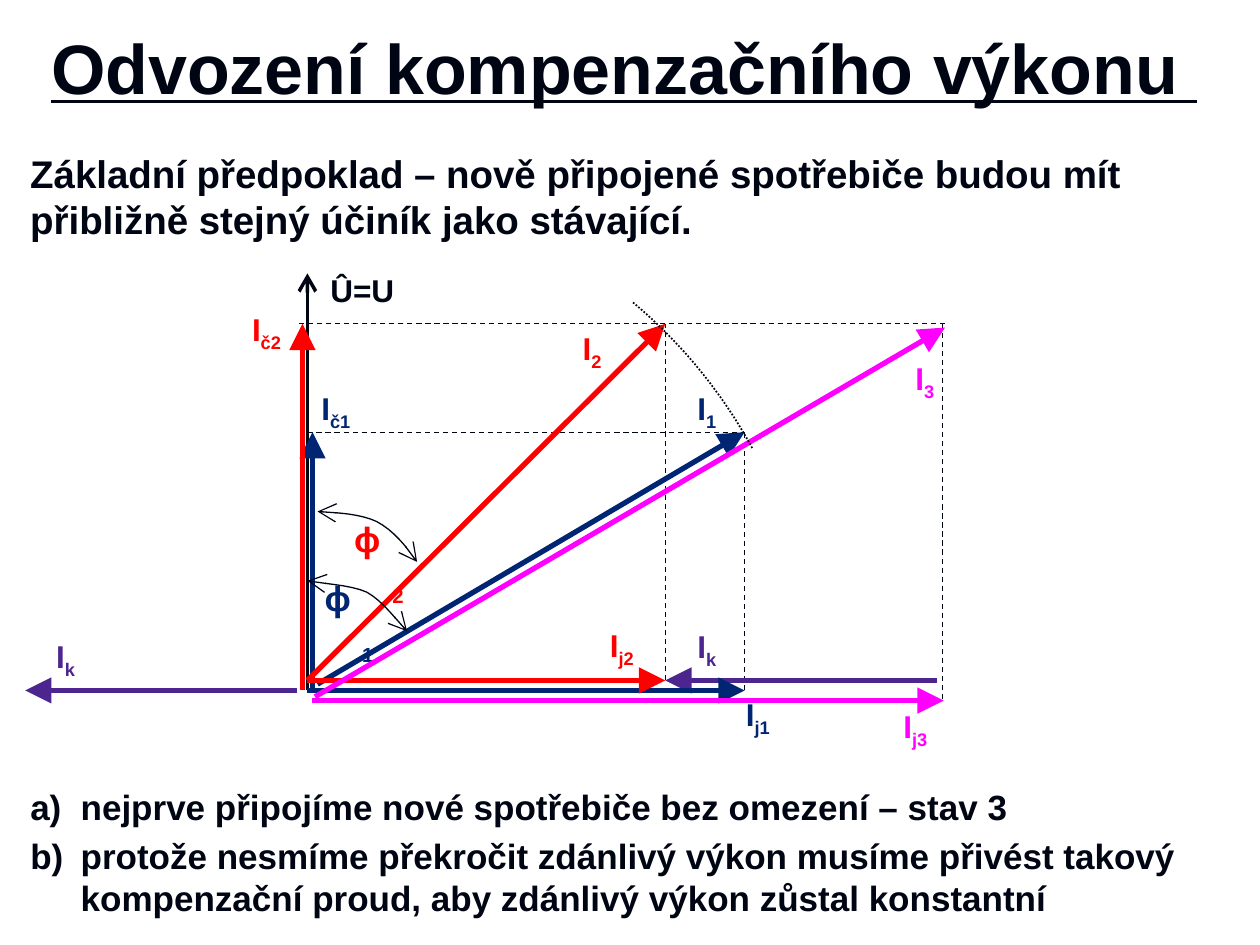
import math
from lxml import etree
from pptx import Presentation
from pptx import util as u
from pptx.dml.color import RGBColor
from pptx.enum import dml, shapes, text
from pptx.oxml.ns import qn

INK = RGBColor(0x00, 0x05, 0x14)
NAVY = RGBColor(0x00, 0x26, 0x73)
RED = RGBColor(0xFF, 0x00, 0x00)
PINK = RGBColor(0xFF, 0x00, 0xFF)
PLUM = RGBColor(0x4D, 0x25, 0x8E)

TITLE = "Odvození kompenzačního výkonu "
PREMISE = ["Základní předpoklad – nově připojené spotřebiče budou mít "
           "přibližně stejný účiník jako stávající."]
STEPS = [
    "a)\tnejprve připojíme nové spotřebiče bez omezení – stav 3",
    "b)\tprotože nesmíme překročit zdánlivý výkon musíme přivést takový "
    "kompenzační proud, aby zdánlivý výkon zůstal konstantní",
]

X0, X1, X2, X3 = 2.44, 5.91, 5.28, 7.48
BASE, UPPER, LOWER = 5.48, 5.4, 5.56
Y1, Y2 = 3.43, 2.57
RADIUS = 4.02

LABELS = [
    ("Û=U", "", INK, 18, 2.52, 2.1, 0.71),
    ("I", "č1", NAVY, 18, 2.44, 3.04, 0.45),
    ("I", "č2", RED, 18, 1.89, 2.41, 0.45),
    ("I", "1", NAVY, 18, 5.43, 3.04, 0.36),
    ("I", "2", RED, 18, 4.52, 2.56, 0.36),
    ("I", "3", PINK, 18, 7.16, 2.8, 0.36),
    ("I", "j1", NAVY, 18, 5.81, 5.47, 0.41),
    ("I", "j2", RED, 18, 4.73, 4.92, 0.41),
    ("I", "j3", PINK, 18, 7.06, 5.56, 0.41),
    ("I", "k", PLUM, 18, 5.43, 4.93, 0.36),
    ("I", "k", PLUM, 18, 0.34, 5.01, 0.36),
    ("ϕ", "1", NAVY, 20, 2.44, 4.53, 0.48),
    ("ϕ", "2", RED, 20, 2.68, 4.06, 0.47),
]
GUIDES = [
    (X0, Y1, X1, Y1),
    (X1, BASE, X1, Y1),
    (X2, UPPER, X2, Y2),
    (X2, Y2, 2.36, Y2),
    (5.24, Y2, 7.52, Y2),
    (X3, Y2, X3, LOWER),
]
VECTORS = [
    (X3 - 0.04, UPPER, X2, UPPER, PLUM),
    (X0, BASE, X1, BASE, NAVY),
    (2.48, BASE, 2.48, Y1, NAVY),
    (2.52, 5.43, X1, Y1, NAVY),
    (X0, UPPER, X2, Y2, RED),
    (2.4, BASE, 2.4, Y2, RED),
    (X0, UPPER, X2, UPPER, RED),
    (2.5, 5.53, 7.5, 2.6, PINK),
    (2.48, LOWER, 7.49, LOWER, PINK),
    (2.36, BASE, 0.2, BASE, PLUM),
]
ANGLES = [
    [(2.44, 4.61), (2.52, 4.63), (2.78, 4.64), (2.91, 4.7),
     (3.04, 4.77), (3.16, 4.94), (3.23, 5.01)],
    [(2.52, 4.06), (2.69, 4.07), (2.86, 4.08), (2.99, 4.14),
     (3.12, 4.21), (3.22, 4.33), (3.31, 4.46)],
]


def style(obj, color, width, dash=None, head=None, tail=None):
    obj.line.color.rgb = color
    obj.line.width = u.Pt(width)
    if dash:
        obj.line.dash_style = dash
    props = obj._element.spPr
    ln = props.find(qn("a:ln"))
    for tag, kind in (("a:headEnd", head), ("a:tailEnd", tail)):
        if kind:
            etree.SubElement(ln, qn(tag), type=kind, w="lg", len="lg")
    if props.find(qn("a:effectLst")) is None:
        etree.SubElement(props, qn("a:effectLst"))


def line(x, y, to_x, to_y, color, width, **ends):
    ends_at = [u.Inches(v) for v in (x, y, to_x, to_y)]
    style(slide.shapes.add_connector(shapes.MSO_CONNECTOR.STRAIGHT, *ends_at),
          color, width, **ends)


def curve(points, width, **ends):
    dots = [(u.Inches(x), u.Inches(y)) for x, y in points]
    pen = slide.shapes.build_freeform(*dots[0])
    pen.add_line_segments(dots[1:], close=False)
    shape = pen.convert_to_shape()
    shape.fill.background()
    style(shape, INK, width, **ends)


def bezier(knots, steps=8):
    points = [knots[0]]
    for i in range(0, len(knots) - 1, 3):
        for n in range(1, steps + 1):
            t = n / steps
            mix = [math.comb(3, k) * t**k * (1 - t)**(3 - k) for k in range(4)]
            points.append(tuple(sum(m * q[axis] for m, q in zip(mix, knots[i:i + 4]))
                                for axis in (0, 1)))
    return points


def type_in(par, color, size, hang=0):
    par.font.name = "Arial"
    par.font.size = u.Pt(size)
    par.font.bold = True
    par.font.color.rgb = color
    par.space_before = u.Pt(size * 0.2)
    if hang:
        props = par._p.get_or_add_pPr()
        props.set("marL", str(u.Inches(hang)))
        props.set("indent", str(-u.Inches(hang)))


def box(x, y, w, h, wrap):
    frame = slide.shapes.add_textbox(*[u.Inches(v) for v in (x, y, w, h)]).text_frame
    frame.word_wrap = wrap
    frame.auto_size = text.MSO_AUTO_SIZE.SHAPE_TO_FIT_TEXT
    return frame


def block(lines, y, w, h, size, hang=0):
    frame = box(0.2, y, w, h, True)
    frame.margin_left = frame.margin_right = u.Inches(0.04)
    frame.margin_top = frame.margin_bottom = u.Inches(0.04)
    for i, words in enumerate(lines):
        par = frame.add_paragraph() if i else frame.paragraphs[0]
        par.add_run().text = words
        type_in(par, INK, size, hang)


def label(name, sub, color, size, x, y, w):
    par = box(x, y, w, size / 45, False).paragraphs[0]
    par.alignment = text.PP_ALIGN.CENTER
    par.add_run().text = name
    if sub:
        run = par.add_run()
        run.text = sub
        run.font._element.set("baseline", "-25000")
    type_in(par, color, size, 0.38)


deck = Presentation()
deck.slide_width, deck.slide_height = u.Inches(10), u.Inches(7.5)
slide = deck.slides.add_slide(deck.slide_layouts[5])

title = slide.shapes.title
title.left, title.top, title.width, title.height = [
    u.Inches(v) for v in (0.27, 0.21, 9.37, 0.63)]
title.text_frame.text = TITLE
title.text_frame.vertical_anchor = text.MSO_ANCHOR.MIDDLE
head = title.text_frame.paragraphs[0]
head.alignment = text.PP_ALIGN.CENTER
type_in(head, INK, 40)
head.space_before = u.Pt(0)
head.font.underline = True

block(PREMISE, 1.15, 9.53, 0.81, 22)
block(STEPS, 6.19, 9.29, 1.15, 20, 0.4)

for item in LABELS:
    label(*item)
line(X0, BASE, X0, 2.17, INK, 2, tail="arrow")
for ends in GUIDES:
    line(*ends, INK, 0.75, dash=dml.MSO_LINE.DASH)
for vector in VECTORS:
    line(*vector, 3, tail="triangle")
for knots in ANGLES:
    curve(bezier(knots), 0.75, head="arrow", tail="arrow")
sweep = [math.radians(50 - n * 21.6 / 24) for n in range(25)]
curve([(X0 + RADIUS * math.cos(a), BASE - RADIUS * math.sin(a)) for a in sweep],
      1, dash=dml.MSO_LINE.ROUND_DOT)

deck.save("out.pptx")
